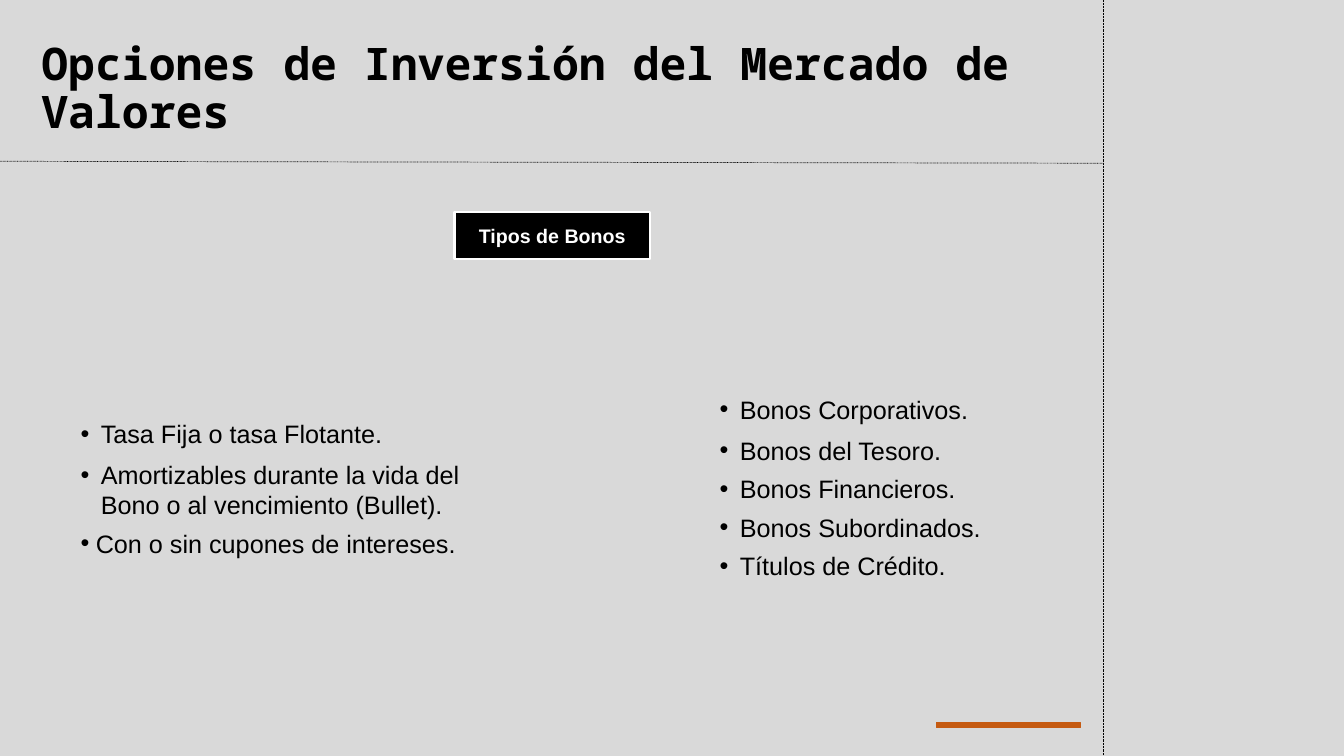
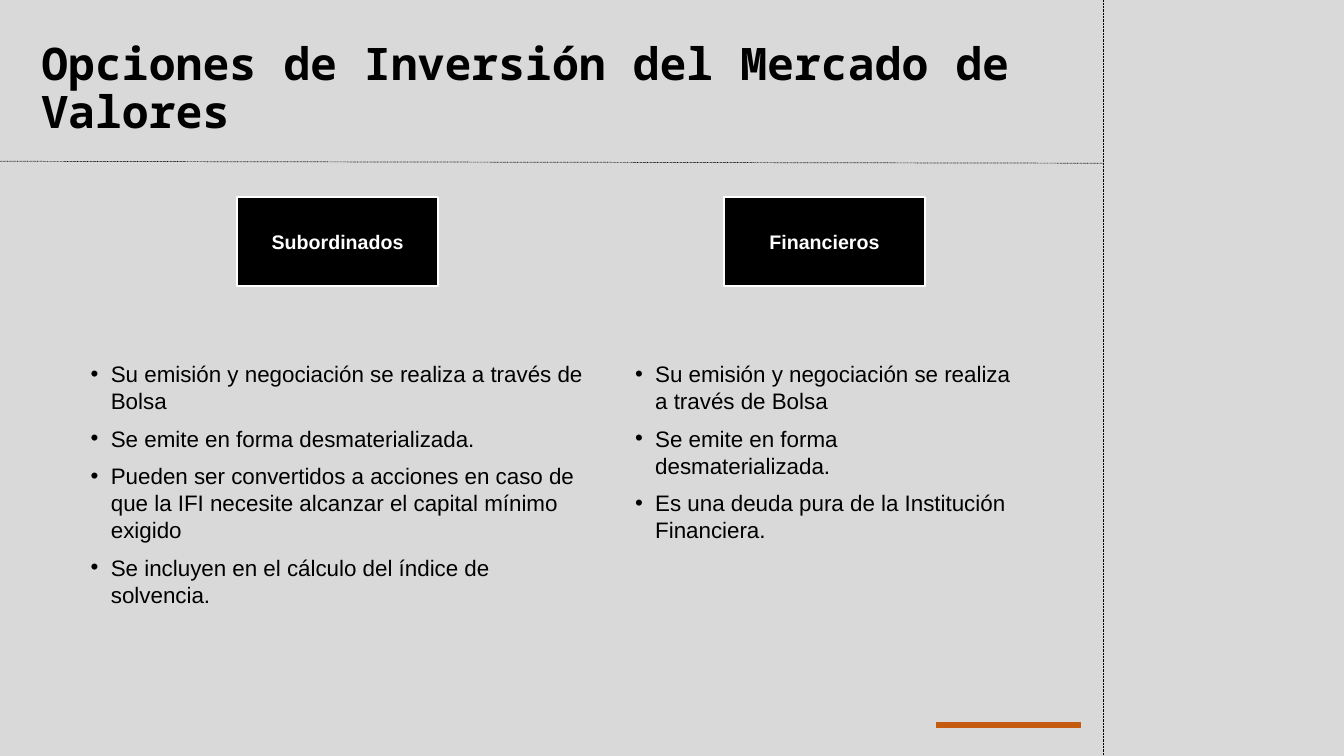
from pptx import Presentation
from pptx.dml.color import RGBColor
from pptx.enum.dml import MSO_LINE as Dash
from pptx.enum.shapes import MSO_CONNECTOR as Conn, MSO_SHAPE as Kind
from pptx.enum.text import MSO_ANCHOR as Anchor, MSO_AUTO_SIZE as Fit, PP_ALIGN as Align
from pptx.oxml.ns import qn
from pptx.util import Pt
from lxml.etree import SubElement as Sub

GREY, BLACK, WHITE, RUST = "D9D9D9", "000000", "FFFFFF", "C55A11"
TITLE = "Opciones de Inversión del Mercado de Valores"
HEAD = {"name": "Noto Sans Mono", "size": Pt(32), "bold": True}
LABEL = {"name": "Arial", "size": Pt(14), "bold": True}
RULES = [(788.4, 0, 788.4, 540), (0, 115.2, 788.4, 116.6)]
WIDE, TIGHT = (14.4, 7.7), (14.4, 5.8)  # indent, space before


def paint(part, color):
    """Give a fill or a font a solid colour."""
    if hasattr(part, "solid"):
        part.solid()
        part = part.fore_color
    else:
        part = part.color
    part.rgb = RGBColor.from_string(color)


def style(font, look, color):
    for key, value in look.items():
        setattr(font, key, value)
    paint(font, color)


# Content: boxes are (left, top, width, height, text),
# lists are (left, top, width, height, inset, size, items)
pages = [
    {
        "boxes": [(324.7, 151.2, 139.7, 33.8, "Tipos de Bonos")],
        "lists": [
            (50.4, 295.2, 305.3, 108.7, (7.2, 3.6), 18, [
                ("Tasa Fija o tasa Flotante.", WIDE),
                ("Amortizables durante la vida del Bono o al vencimiento (Bullet).", WIDE),
                ("Con o sin cupones de intereses.", (10.8, 5.8)),
            ]),
            (506.9, 277.9, 305.3, 142.6, (7.2, 3.6), 18, [
                ("Bonos Corporativos.", WIDE),
                ("Bonos del Tesoro.", WIDE),
                ("Bonos Financieros.", TIGHT),
                ("Bonos Subordinados.", TIGHT),
                ("Títulos de Crédito.", TIGHT),
            ]),
        ],
    },
    {
        "boxes": [
            (169.2, 140.4, 144, 64.1, "Subordinados"),
            (517, 140.4, 144, 64.1, "Financieros"),
        ],
        "lists": [
            (61.9, 254.5, 357.8, 240, (2.9, 2.9), 16, [
                ("Su emisión y negociación se realiza a través de Bolsa", WIDE),
                ("Se emite en forma desmaterializada.", WIDE),
                ("Pueden ser convertidos a acciones en caso de que la IFI "
                 "necesite alcanzar el capital mínimo exigido", WIDE),
                ("Se incluyen en el cálculo del índice de solvencia.", WIDE),
            ]),
            (450.7, 254.5, 276.5, 221, (2.9, 2.9), 16, [
                ("Su emisión y negociación se realiza a través de Bolsa", WIDE),
                ("Se emite en forma desmaterializada.", WIDE),
                ("Es una deuda pura de la Institución Financiera.", WIDE),
            ]),
        ],
    },
]

# Deck, background and title place
deck = Presentation()
deck.slide_width, deck.slide_height = Pt(960), Pt(540)
paint(deck.slide_master.background.fill, GREY)
layout = deck.slide_layouts[3]
spot = layout.placeholders[0]
spot.left, spot.top, spot.width, spot.height = map(Pt, (22.3, 12.2, 828, 104.4))

for page in pages:
    slide = deck.slides.add_slide(layout)
    shapes = slide.shapes

    # Title
    frame = shapes.title.text_frame
    frame.text = TITLE
    frame.auto_size = Fit.NONE
    frame.vertical_anchor = Anchor.MIDDLE
    para = frame.paragraphs[0]
    para.alignment, para.line_spacing = Align.LEFT, 0.9
    style(para.runs[0].font, HEAD, BLACK)

    # Dotted rules
    for ends in RULES:
        rule = shapes.add_connector(Conn.STRAIGHT, *map(Pt, ends))
        paint(rule.line.fill, BLACK)
        rule.line.width, rule.line.dash_style = Pt(0.5), Dash.ROUND_DOT
        Sub(rule.element.spPr, qn("a:effectLst"))

    # Accent bar and label boxes
    bar = (668.9, 516.2, 103, 3.6, "")
    for *area, text in [bar] + page["boxes"]:
        fill, edge, width = (BLACK, WHITE, 1.5) if text else (RUST, RUST, 1)
        box = shapes.add_shape(Kind.RECTANGLE, *map(Pt, area))
        box.shadow.inherit = False
        paint(box.fill, fill)
        paint(box.line.fill, edge)
        box.line.width = Pt(width)
        if text:
            frame = box.text_frame
            frame.margin_left = frame.margin_right = 0
            frame.margin_top = frame.margin_bottom = 0
            frame.vertical_anchor = Anchor.MIDDLE
            para = frame.paragraphs[0]
            para.text, para.alignment = text, Align.CENTER
            style(para.runs[0].font, LABEL, WHITE)

    # Bullet lists
    for index, (*area, inset, size, items) in enumerate(page["lists"], 1):
        body = slide.placeholders[index]
        body.left, body.top, body.width, body.height = map(Pt, area)
        frame = body.text_frame
        frame.auto_size = Fit.NONE
        frame.margin_left = frame.margin_right = Pt(inset[0])
        frame.margin_top = frame.margin_bottom = Pt(inset[1])
        frame.text = "\n".join(text for text, _ in items)
        for para, (_, (indent, space)) in zip(frame.paragraphs, items):
            para.space_before = Pt(space)
            props = para._p.get_or_add_pPr()
            props.set("marL", str(Pt(indent)))
            props.set("indent", str(-Pt(indent)))
            style(para.runs[0].font, {"name": "Arial", "size": Pt(size)}, BLACK)

deck.save("out.pptx")
